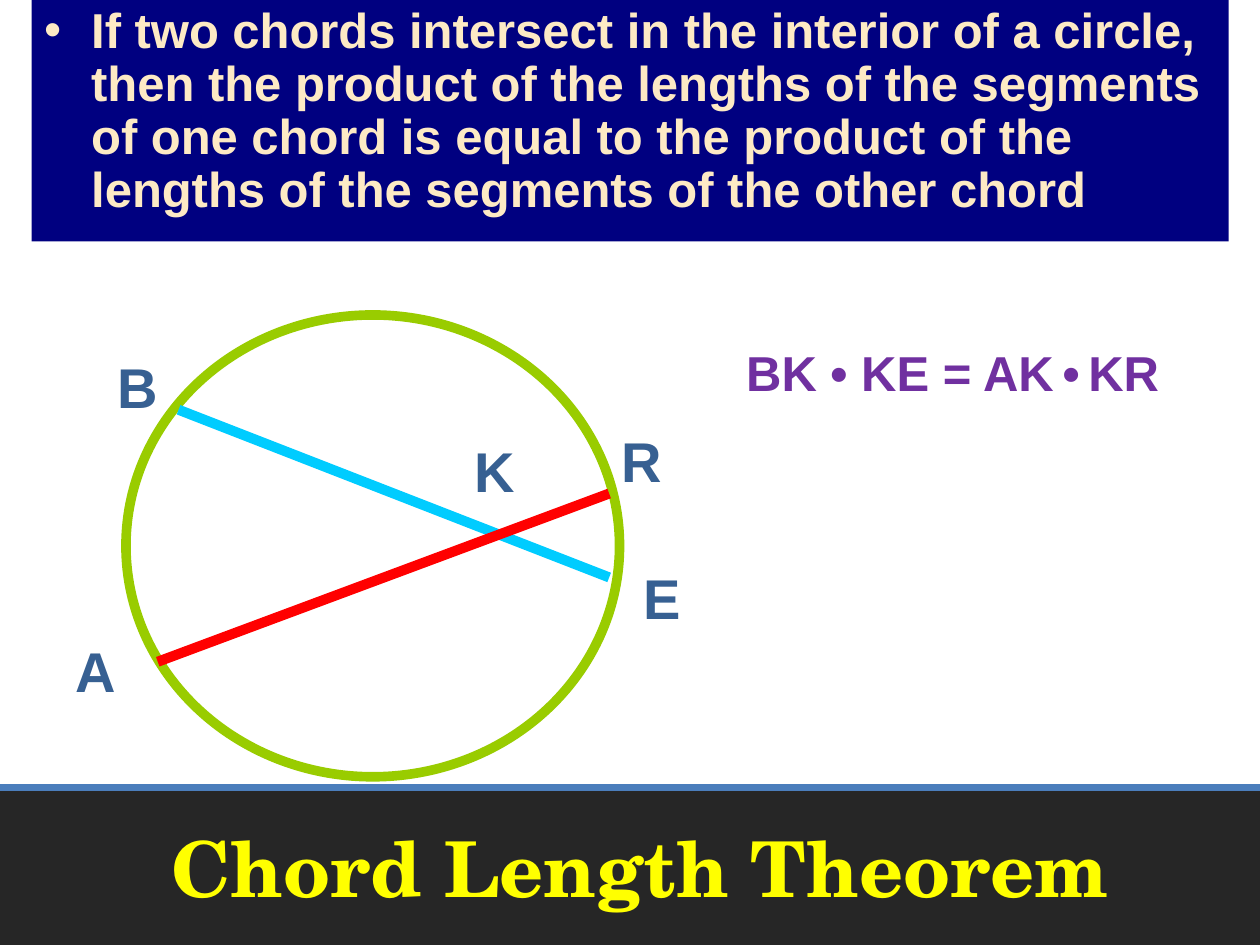
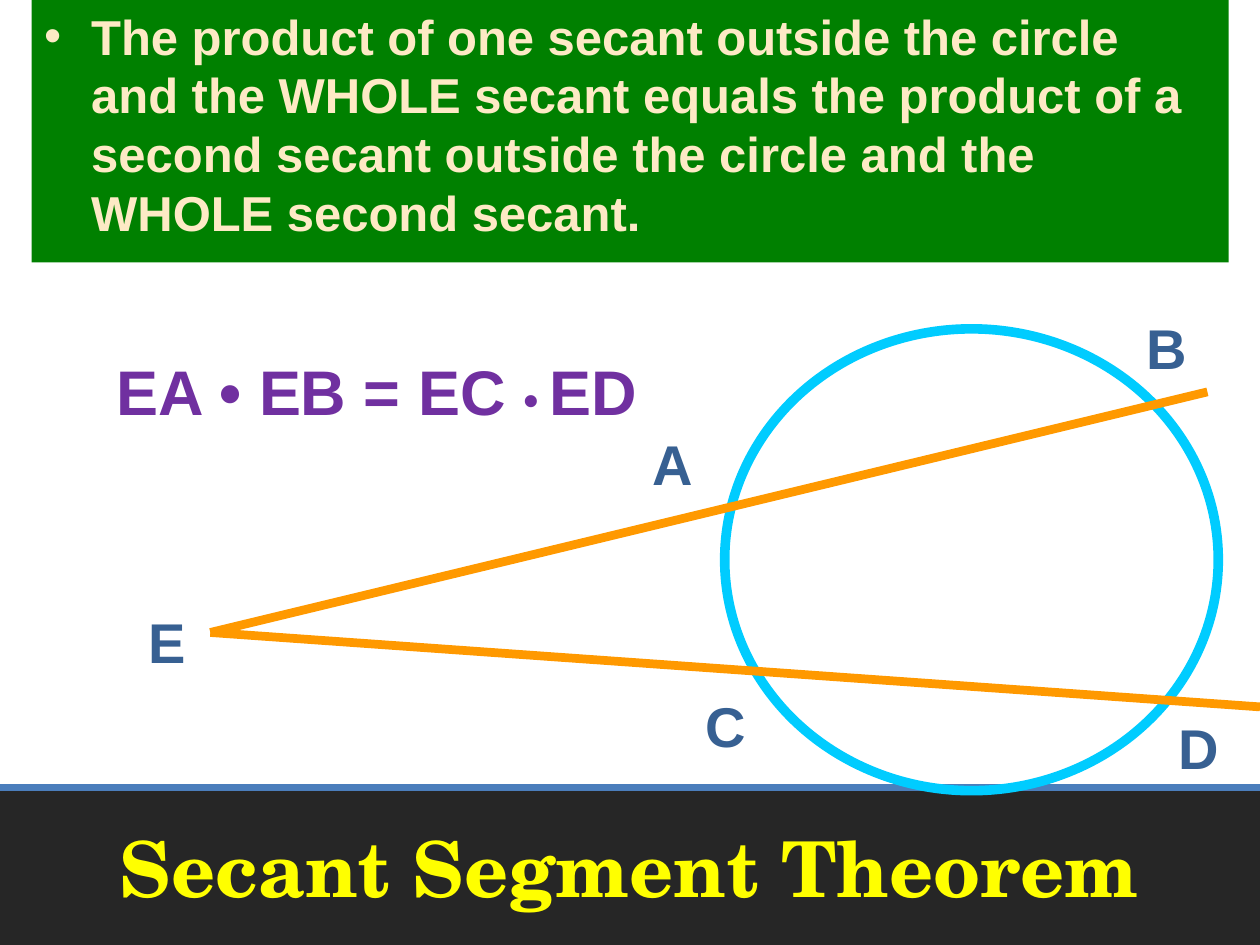
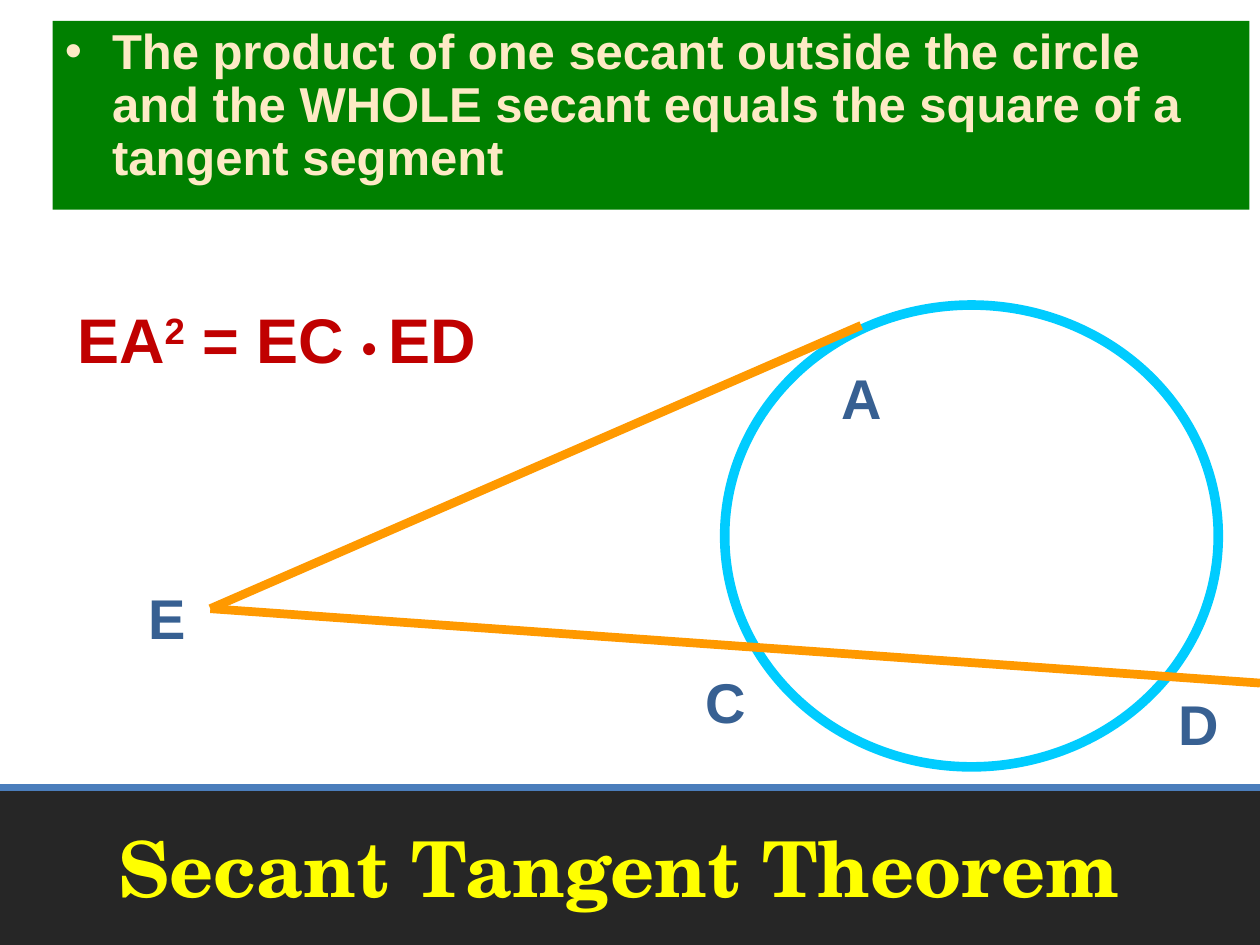
from dataclasses import dataclass
from typing import Any

from lxml import etree
from pptx import Presentation
from pptx import util as u
from pptx.dml.color import RGBColor
from pptx.enum import shapes, text
from pptx.oxml import ns

COLORS = {
    "band": "262626",
    "rule": "4B7EBC",
    "title": "FFFF00",
    "statement": "FDEAC5",
    "navy": "000080",
    "green": "008000",
    "label": "376092",
    "purple": "7030A0",
    "crimson": "C00000",
    "lime": "99CC00",
    "sky": "00CCFF",
    "red": "FF0000",
    "orange": "FF9900",
}
SLIDE_WIDTH, SLIDE_HEIGHT = 25.4, 19.05
BAND_TOP = 15.88
TITLE_WIDTH = 22.86
STATEMENT_WIDTH = 24.13
CIRCLE_WIDTH, CIRCLE_HEIGHT = 9.95, 9.31
HANGING_INDENT = 0.95

TITLE_FONT = {"name": "TeX Gyre Schola", "size": u.Pt(44), "bold": True}
STATEMENT_FONT = {"name": "Arial", "size": u.Pt(28), "bold": True}
LABEL_FONT = {"name": "Arial", "size": u.Pt(32), "bold": True}
TITLE_FRAME = {"word_wrap": True, "vertical_anchor": text.MSO_ANCHOR.MIDDLE}
STATEMENT_FRAME = {"word_wrap": True, "vertical_anchor": text.MSO_ANCHOR.TOP}
FREE_FRAME = {"word_wrap": False, "auto_size": text.MSO_AUTO_SIZE.SHAPE_TO_FIT_TEXT}


@dataclass(frozen=True)
class Box:
    left: float
    top: float
    width: float
    height: float

    def lengths(self) -> list[u.Length]:
        return [u.Cm(side) for side in (self.left, self.top, self.width, self.height)]


@dataclass(frozen=True)
class Segment:
    start: tuple[float, float]
    end: tuple[float, float]
    color: str
    weight: float


@dataclass(frozen=True)
class PointLabel:
    letter: str
    left: float
    top: float


@dataclass(frozen=True)
class Term:
    wording: str
    size: float
    bold: bool = True
    baseline: int = 0


@dataclass(frozen=True)
class Formula:
    box: Box
    color: str
    terms: list[Term]


@dataclass(frozen=True)
class Circle:
    left: float
    top: float
    color: str


@dataclass(frozen=True)
class Theorem:
    title: str
    title_left: float
    statement: str
    statement_box: Box
    statement_fill: str
    line_spacing: float
    circle: Circle
    segments: list[Segment]
    labels: list[PointLabel]
    formula: Formula


def rgb(color: str) -> RGBColor:
    return RGBColor.from_string(COLORS[color])


def set_values(target: Any, values: dict[str, Any]) -> None:
    for attribute, value in values.items():
        setattr(target, attribute, value)


def write(paragraph: Any, wording: str, color: str, font: dict[str, Any]) -> Any:
    run = paragraph.add_run()
    run.text = wording
    set_values(run.font, font)
    run.font.color.rgb = rgb(color)
    return run


def add_text_frame(slide: Any, box: Box, frame: dict[str, Any]) -> Any:
    text_frame = slide.shapes.add_textbox(*box.lengths()).text_frame
    set_values(text_frame, frame)
    return text_frame


def add_filled(slide: Any, box: Box, color: str) -> Any:
    area = slide.shapes.add_shape(shapes.MSO_SHAPE.RECTANGLE, *box.lengths())
    area.shadow.inherit = False
    area.fill.solid()
    area.fill.fore_color.rgb = rgb(color)
    area.line.fill.background()
    return area


def add_segment(slide: Any, segment: Segment) -> None:
    ends = [u.Cm(value) for value in (*segment.start, *segment.end)]
    line = slide.shapes.add_connector(shapes.MSO_CONNECTOR.STRAIGHT, *ends)
    line.line.color.rgb = rgb(segment.color)
    line.line.width = u.Pt(segment.weight)
    etree.SubElement(line._element.spPr, ns.qn("a:effectLst"))


def add_title_band(slide: Any, title: str, left: float) -> None:
    height = SLIDE_HEIGHT - BAND_TOP
    add_filled(slide, Box(0, BAND_TOP, SLIDE_WIDTH, height), "band")
    add_segment(slide, Segment((0, BAND_TOP), (SLIDE_WIDTH, BAND_TOP), "rule", 4))
    frame = add_text_frame(slide, Box(left, BAND_TOP, TITLE_WIDTH, height), TITLE_FRAME)
    frame.paragraphs[0].alignment = text.PP_ALIGN.CENTER
    write(frame.paragraphs[0], title, "title", TITLE_FONT)


def add_statement(slide: Any, theorem: Theorem) -> None:
    panel = add_filled(slide, theorem.statement_box, theorem.statement_fill)
    set_values(panel.text_frame, STATEMENT_FRAME)
    paragraph = panel.text_frame.paragraphs[0]
    set_values(paragraph, {"alignment": text.PP_ALIGN.LEFT, "line_spacing": theorem.line_spacing})
    write(paragraph, theorem.statement, "statement", STATEMENT_FONT)
    properties = paragraph._p.get_or_add_pPr()
    properties.set("marL", str(u.Cm(HANGING_INDENT)))
    properties.set("indent", str(-u.Cm(HANGING_INDENT)))
    before = etree.SubElement(properties, ns.qn("a:spcBef"))
    etree.SubElement(before, ns.qn("a:spcPct"), val="20000")
    bullet_color = etree.SubElement(properties, ns.qn("a:buClr"))
    etree.SubElement(bullet_color, ns.qn("a:srgbClr"), val=COLORS["statement"])
    etree.SubElement(properties, ns.qn("a:buFont"), typeface="Arial")
    etree.SubElement(properties, ns.qn("a:buChar"), char="•")


def add_circle(slide: Any, circle: Circle) -> None:
    box = Box(circle.left, circle.top, CIRCLE_WIDTH, CIRCLE_HEIGHT)
    ring = slide.shapes.add_shape(shapes.MSO_SHAPE.OVAL, *box.lengths())
    ring.shadow.inherit = False
    ring.fill.background()
    ring.line.color.rgb = rgb(circle.color)
    ring.line.width = u.Pt(5.5)


def add_label(slide: Any, label: PointLabel) -> None:
    width = 1.27 if label.letter == "E" else 1.32
    frame = add_text_frame(slide, Box(label.left, label.top, width, 1.6), FREE_FRAME)
    write(frame.paragraphs[0], label.letter, "label", LABEL_FONT)


def add_formula(slide: Any, formula: Formula) -> None:
    paragraph = add_text_frame(slide, formula.box, FREE_FRAME).paragraphs[0]
    paragraph.alignment = text.PP_ALIGN.CENTER
    for term in formula.terms:
        font = {"name": "Arial", "size": u.Pt(term.size), "bold": term.bold}
        run = write(paragraph, term.wording, formula.color, font)
        if term.baseline:
            run._r.get_or_add_rPr().set("baseline", str(term.baseline * 1000))


def add_theorem(deck: Any, theorem: Theorem) -> None:
    slide = deck.slides.add_slide(deck.slide_layouts[6])
    add_title_band(slide, theorem.title, theorem.title_left)
    add_statement(slide, theorem)
    add_circle(slide, theorem.circle)
    for segment in theorem.segments:
        add_segment(slide, segment)
    for label in theorem.labels:
        add_label(slide, label)
    add_formula(slide, theorem.formula)


def secant_figure(
    top: float, far_end: tuple[float, float], far_labels: list[PointLabel]
) -> dict[str, Any]:
    vertex = (4.24, top + 6.12)
    return {
        "circle": Circle(14.61, top, "sky"),
        "segments": [
            Segment(vertex, far_end, "orange", 5),
            Segment(vertex, (SLIDE_WIDTH, top + 7.62), "orange", 5),
        ],
        "labels": [
            *far_labels,
            PointLabel("C", 13.97, top + 7.19),
            PointLabel("D", 23.5, top + 7.62),
            PointLabel("E", 2.75, top + 5.49),
        ],
    }


THEOREMS = [
    Theorem(
        title="Chord Length Theorem",
        title_left=1.48,
        statement="If two chords intersect in the interior of a circle, then the product "
        "of the lengths of the segments of one chord is equal to the product of the "
        "lengths of the segments of the other chord",
        statement_box=Box(0.64, 0, STATEMENT_WIDTH, 4.87),
        statement_fill="navy",
        line_spacing=0.9,
        circle=Circle(2.54, 6.35, "lime"),
        segments=[
            Segment((3.6, 8.26), (12.28, 11.64), "sky", 5.75),
            Segment((3.18, 13.34), (12.28, 9.95), "red", 5.75),
        ],
        labels=[
            PointLabel("B", 2.12, 6.99),
            PointLabel("R", 12.28, 8.47),
            PointLabel("E", 12.73, 11.23),
            PointLabel("A", 1.27, 12.7),
            PointLabel("K", 9.31, 8.68),
        ],
        formula=Formula(
            Box(14.76, 6.78, 8.89, 1.45),
            "purple",
            [
                Term("BK • KE = AK", 28),
                Term(" ", 18, bold=False),
                Term("•", 28),
                Term(" ", 18, bold=False),
                Term("KR", 28),
            ],
        ),
    ),
    Theorem(
        title="Secant Segment Theorem",
        title_left=1.27,
        statement="The product of one secant outside the circle and the WHOLE secant "
        "equals the product of a second secant outside the circle and the WHOLE "
        "second secant.",
        statement_box=Box(0.64, 0, STATEMENT_WIDTH, 5.29),
        statement_fill="green",
        line_spacing=1.0,
        formula=Formula(
            Box(2.08, 6.99, 11.05, 1.78),
            "purple",
            [Term("EA • EB = EC ", 36), Term("• ", 24), Term("ED", 36)],
        ),
        **secant_figure(
            6.63,
            (24.34, 7.9),
            [PointLabel("B", 22.86, 6.2), PointLabel("A", 12.91, 8.53)],
        ),
    ),
    Theorem(
        title="Secant Tangent Theorem",
        title_left=1.06,
        statement="The product of one secant outside the circle and the WHOLE secant "
        "equals the square of a tangent segment",
        statement_box=Box(1.06, 0.42, STATEMENT_WIDTH, 3.81),
        statement_fill="green",
        line_spacing=0.9,
        formula=Formula(
            Box(1.27, 5.93, 8.61, 1.78),
            "crimson",
            [
                Term("EA", 36),
                Term("2", 36, baseline=30),
                Term(" = EC ", 36),
                Term("• ", 24),
                Term("ED", 36),
            ],
        ),
        **secant_figure(6.15, (17.36, 6.56), [PointLabel("A", 16.72, 7.2)]),
    ),
]


def main() -> None:
    deck = Presentation()
    set_values(deck, {"slide_width": u.Cm(SLIDE_WIDTH), "slide_height": u.Cm(SLIDE_HEIGHT)})
    for theorem in THEOREMS:
        add_theorem(deck, theorem)
    deck.save("out.pptx")


if __name__ == "__main__":
    main()
